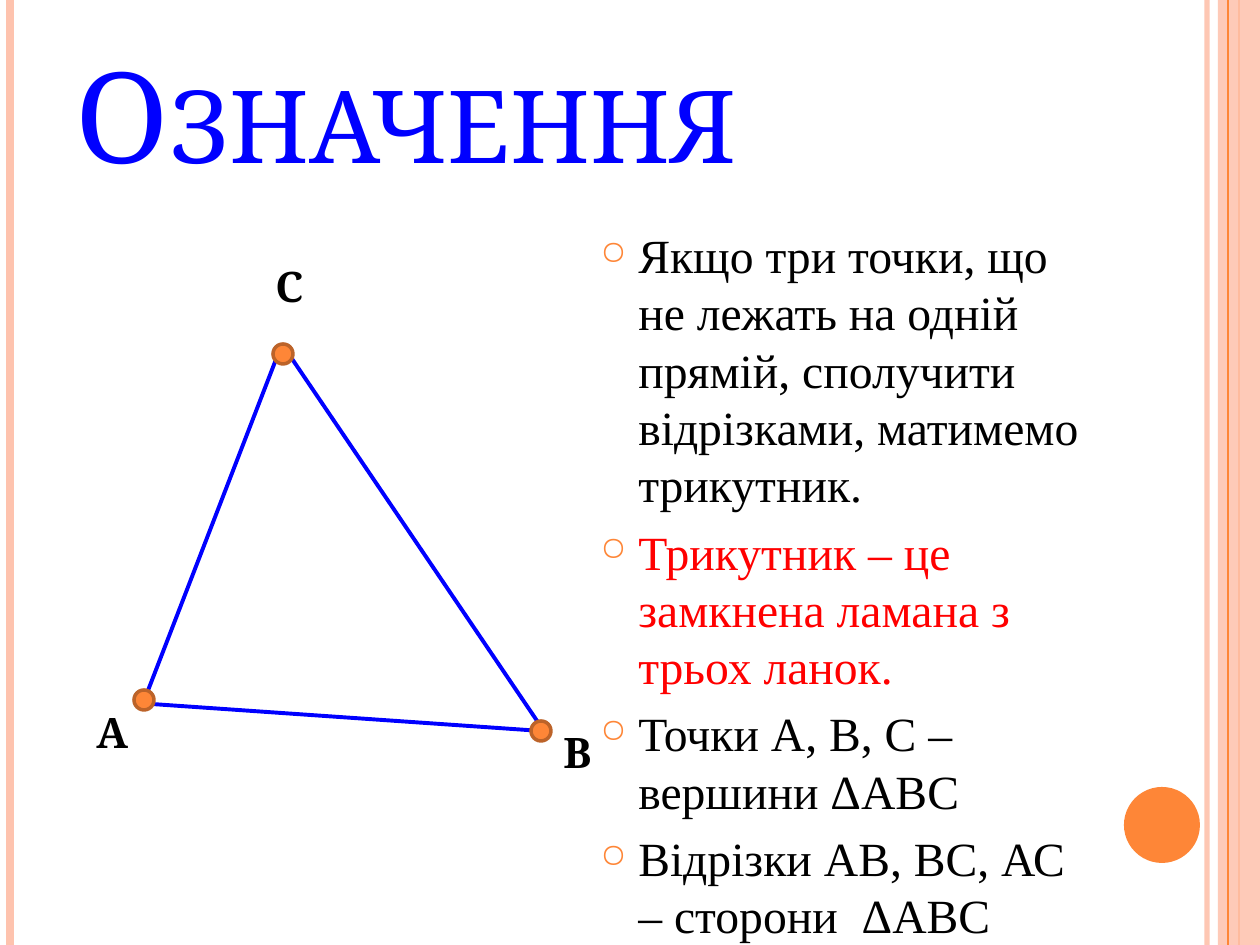
from lxml.etree import SubElement
from pptx import Presentation
from pptx.dml.color import RGBColor
from pptx.enum.shapes import MSO_CONNECTOR, MSO_SHAPE
from pptx.enum.text import MSO_ANCHOR, MSO_AUTO_SIZE, PP_ALIGN
from pptx.oxml.ns import qn
from pptx.util import Emu, Pt

EMU_PER_PX = 914400 // 126
ORANGE, PEACH, BROWN = "FE8637", "FEC3AE", "BC6329"
BLUE, RED, BLACK = "0000FF", "FF0000", "000000"
HEADING, BODY = "Cambria", "Times New Roman"


def px(n):
    return Emu(n * EMU_PER_PX)


def color(hex_string):
    return RGBColor.from_string(hex_string)


def set_alpha(sp, percent):
    clr = next(sp._element.spPr.iter(qn("a:srgbClr")))
    SubElement(clr, qn("a:alpha")).set("val", str(percent * 1000))


class SlideBuilder:
    def __init__(self, slide):
        self.s = slide

    def run(self, p, text, size, font, hex_string, bold=False):
        r = p.add_run()
        r.text = text
        r.font.size = Pt(size)
        r.font.name = font
        r.font.bold = bold
        r.font.color.rgb = color(hex_string)
        return r

    def title(self, text, x, y, w, h):
        sp = self.s.shapes.title
        sp.left, sp.top, sp.width, sp.height = map(px, (x, y, w, h))
        tf = sp.text_frame
        tf.auto_size = MSO_AUTO_SIZE.NONE
        tf.vertical_anchor = MSO_ANCHOR.BOTTOM
        p = tf.paragraphs[0]
        p.alignment = PP_ALIGN.LEFT
        r = self.run(p, text, 72, HEADING, BLUE)
        r.font._element.set("cap", "small")

    def line(self, x1, y1, x2, y2, hex_string, width, alpha=100):
        c = self.s.shapes.add_connector(
            MSO_CONNECTOR.STRAIGHT, px(x1), px(y1), px(x2), px(y2))
        c.line.color.rgb = color(hex_string)
        c.line.width = Pt(width)
        if alpha < 100:
            set_alpha(c, alpha)
        SubElement(c._element.spPr, qn("a:effectLst"))

    def shape(self, kind, x, y, w, h, fill, outline=None, alpha=100):
        sp = self.s.shapes.add_shape(kind, px(x), px(y), px(w), px(h))
        sp.shadow.inherit = False
        sp.fill.solid()
        sp.fill.fore_color.rgb = color(fill)
        if alpha < 100:
            set_alpha(sp, alpha)
        if outline:
            sp.line.color.rgb = color(outline)
            sp.line.width = Pt(2)
        else:
            sp.line.fill.background()

    def label(self, text, x, y, w, h):
        tf = self.s.shapes.add_textbox(px(x), px(y), px(w), px(h)).text_frame
        tf.word_wrap = False
        self.run(tf.paragraphs[0], text, 24, HEADING, BLACK, bold=True)

    def bullets(self, items, x, y, w, h):
        tf = self.s.shapes.add_textbox(px(x), px(y), px(w), px(h)).text_frame
        tf.word_wrap = True
        for i, (text, hex_string) in enumerate(items):
            p = tf.add_paragraph() if i else tf.paragraphs[0]
            p.space_before = Pt(6)
            pPr = p._p.get_or_add_pPr()
            pPr.set("marL", str(px(38)))
            pPr.set("indent", str(-px(38)))
            bu_clr = SubElement(pPr, qn("a:buClr"))
            SubElement(bu_clr, qn("a:srgbClr")).set("val", ORANGE)
            SubElement(pPr, qn("a:buSzPct")).set("val", "70000")
            SubElement(pPr, qn("a:buChar")).set("char", "○")
            self.run(p, text, 27.2, BODY, hex_string)


def main():
    prs = Presentation()
    prs.slide_width, prs.slide_height = px(1260), px(945)
    b = SlideBuilder(prs.slides.add_slide(prs.slide_layouts[5]))

    # Side stripes and page-number disc
    b.line(1207, 0, 1207, 945, PEACH, 3, alpha=93)
    b.line(10, 0, 10, 945, PEACH, 4.5)
    b.line(1239, 0, 1239, 945, ORANGE, 1.5)
    b.shape(MSO_SHAPE.RECTANGLE, 1218, 0, 42, 945, PEACH, alpha=87)
    b.line(1228, 0, 1228, 945, ORANGE, 0.75)
    b.shape(MSO_SHAPE.OVAL, 1124, 787, 76, 76, ORANGE)

    b.title("Означення", 63, 38, 1029, 157)

    # Triangle sides
    for side in ((137, 703, 541, 731), (144, 701, 282, 344),
                 (282, 344, 548, 737)):
        b.line(*side, BLUE, 2.25)

    # Definitions
    b.bullets([
        ("Якщо три точки, що не лежать на одній прямій, сполучити "
         "відрізками, матимемо трикутник.", BLACK),
        ("Трикутник – це замкнена ламана з трьох ланок.", RED),
        ("Точки А, В, С – вершини ΔАВС", BLACK),
        ("Відрізки АВ, ВС, АС – сторони  ΔАВС", BLACK),
    ], 588, 220, 504, 630)

    # Vertices: dot centre, then label box
    for name, cx, cy, box in (("А", 144, 700, (84, 700, 52, 63)),
                              ("В", 541, 731, (551, 720, 49, 63)),
                              ("С", 283, 354, (263, 254, 48, 63))):
        b.shape(MSO_SHAPE.OVAL, cx - 10, cy - 10, 20, 20, ORANGE, BROWN)
        b.label(name, *box)

    prs.save("out.pptx")


if __name__ == "__main__":
    main()
